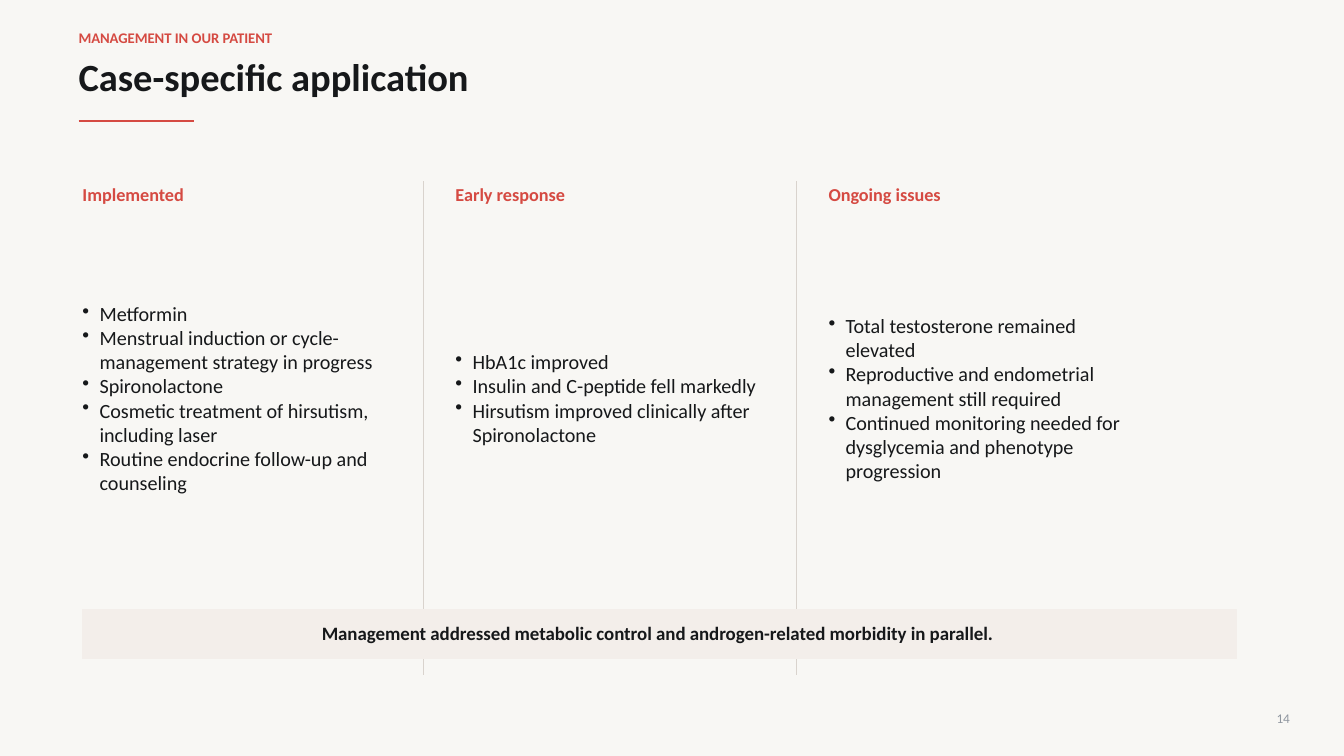
"""Build the case-specific application slide: three columns over a summary band."""
from lxml import etree
from pptx import Presentation
from pptx import util as u
from pptx.dml.color import RGBColor
from pptx.enum import shapes, text
from pptx.oxml.ns import qn

KICKER = "MANAGEMENT IN OUR PATIENT"
TITLE = "Case-specific application"
COLUMNS = [
    ("Implemented", [
        "Metformin",
        "Menstrual induction or cycle-management strategy in progress",
        "Spironolactone",
        "Cosmetic treatment of hirsutism, including laser",
        "Routine endocrine follow-up and counseling",
    ]),
    ("Early response", [
        "HbA1c improved",
        "Insulin and C-peptide fell markedly",
        "Hirsutism improved clinically after Spironolactone",
    ]),
    ("Ongoing issues", [
        "Total testosterone remained elevated",
        "Reproductive and endometrial management still required",
        "Continued monitoring needed for dysglycemia and phenotype progression",
    ]),
]
SUMMARY = "Management addressed metabolic control and androgen-related morbidity in parallel."
NUMBER = "14"

COLORS = {"paper": "F8F7F4", "ink": "16181A", "accent": "D54A42",
          "rule": "D9D3CD", "band": "F3EEEA", "muted": "8F969F"}
FONT = "Calibri"
EDGE = 1.98
LEFT = 2.08
PITCH = 9.4
WIDTH = 7.87
GAP = 0.81
INDENT = 0.43
ALIGN = text.PP_ALIGN


def color(name):
    return RGBColor.from_string(COLORS[name])


def place(shape, box):
    shape.left, shape.top, shape.width, shape.height = map(u.Cm, box)


def bullet(para):
    props = para._p.get_or_add_pPr()
    props.set("marL", str(u.Cm(INDENT)))
    props.set("indent", str(-u.Cm(INDENT)))
    etree.SubElement(props, qn("a:buChar")).set("char", "•")


def write(shape, lines, size, tint="ink", bold=False, align=ALIGN.LEFT, dots=False):
    frame = shape.text_frame
    frame.word_wrap = True
    frame.auto_size = text.MSO_AUTO_SIZE.NONE
    frame.vertical_anchor = text.MSO_ANCHOR.MIDDLE
    frame.margin_left = frame.margin_right = frame.margin_top = frame.margin_bottom = 0
    frame.text = "\n".join(lines)
    for para in frame.paragraphs:
        para.alignment = align
        if dots:
            bullet(para)
        font = para.font
        font.name, font.size, font.bold = FONT, u.Pt(size), bold
        font.color.rgb = color(tint)


def label(slide, box, lines, size, **style):
    write(slide.shapes.add_textbox(*map(u.Cm, box)), lines, size, **style)


def rule(slide, ends, tint, weight):
    line = slide.shapes.add_connector(shapes.MSO_CONNECTOR.STRAIGHT, *map(u.Cm, ends))
    line.line.color.rgb = color(tint)
    line.line.width = u.Pt(weight)
    etree.SubElement(line._element.spPr, qn("a:effectLst"))


def main():
    deck = Presentation()
    deck.slide_width, deck.slide_height = u.Cm(33.87), u.Cm(19.05)
    slide = deck.slides.add_slide(deck.slide_layouts[5])
    slide.background.fill.solid()
    slide.background.fill.fore_color.rgb = color("paper")

    title = slide.shapes.title
    place(title, (EDGE, 1.32, 19.81, 1.22))
    write(title, [TITLE], 27.5, bold=True)
    label(slide, (EDGE, 0.71, 8.13, 0.46), [KICKER], 10.5, tint="accent", bold=True)
    rule(slide, (EDGE, 3.05, EDGE + 2.92, 3.05), "accent", 1.6)

    for i, (head, items) in enumerate(COLUMNS):
        x = LEFT + i * PITCH
        if i:
            rule(slide, (x - GAP, 4.57, x - GAP, 17.02), "rule", 1)
        label(slide, (x, 4.62, WIDTH, 0.56), [head], 13, tint="accent", bold=True)
        label(slide, (x, 5.46, WIDTH, 9.14), items, 14.4, dots=True)

    band = slide.shapes.add_shape(shapes.MSO_SHAPE.RECTANGLE,
                                  *map(u.Cm, (LEFT, 15.37, 29.08, 1.22)))
    band.shadow.inherit = False
    band.fill.solid()
    band.fill.fore_color.rgb = band.line.color.rgb = color("band")
    band.line.width = u.Pt(1)
    label(slide, (2.54, 15.72, 28.07, 0.46), [SUMMARY], 13.5, bold=True, align=ALIGN.CENTER)
    label(slide, (31.62, 17.86, 0.89, 0.46), [NUMBER], 9.5, tint="muted", align=ALIGN.RIGHT)
    deck.save("out.pptx")


if __name__ == "__main__":
    main()
